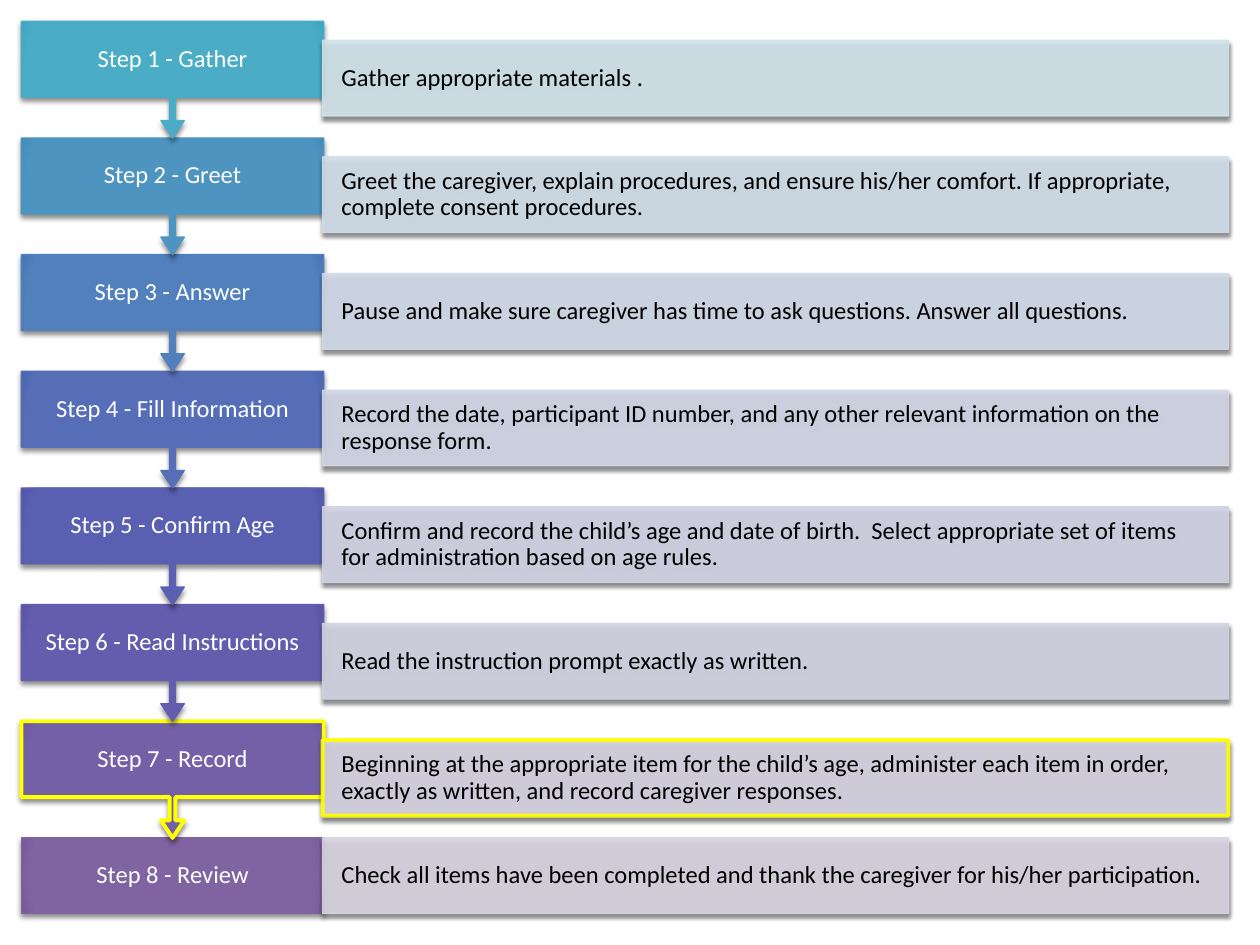
from dataclasses import dataclass

from pptx import Presentation
from pptx.dml.color import RGBColor
from pptx.enum.shapes import MSO_SHAPE
from pptx.enum.text import MSO_ANCHOR, PP_ALIGN
from pptx.oxml import parse_xml
from pptx.oxml.ns import nsdecls, qn
from pptx.util import Inches, Pt


@dataclass(frozen=True)
class Theme:
    """Colours, font and sizes shared by the whole slide."""
    font: str = "Calibri"
    text_size: float = 14
    step_text: str = "FFFFFF"
    detail_text: str = "000000"
    shadow: str = "000000"
    highlight: str = "FFFF00"
    highlight_width: float = 2.25
    line_width: float = 0.79
    detail_opacity: int = 90


@dataclass(frozen=True)
class Step:
    """One step of the procedure with its pair of colours."""
    name: str
    detail: str
    color: str
    pale: str
    highlighted: bool = False


THEME = Theme()

STEPS = [
    Step("Gather", "Gather appropriate materials .", "4BACC6", "D0E3EA"),
    Step("Greet", "Greet the caregiver, explain procedures, and ensure his/her comfort. "
         "If appropriate, complete consent procedures.", "4E94C1", "D0DEE9"),
    Step("Answer", "Pause and make sure caregiver has time to ask questions. "
         "Answer all questions.", "5280BC", "D0DAE8"),
    Step("Fill Information", "Record the date, participant ID number, and any other relevant "
         "information on the response form.", "556EB7", "D1D6E6"),
    Step("Confirm Age", "Confirm and record the child’s age and date of birth.  Select "
         "appropriate set of items for administration based on age rules.", "5960B2", "D1D3E5"),
    Step("Read Instructions", "Read the instruction prompt exactly as written.",
         "645DAD", "D3D2E3"),
    Step("Record", "Beginning at the appropriate item for the child’s age, administer each item "
         "in order, exactly as written, and record caregiver responses.",
         "7460A7", "D6D2E1", highlighted=True),
    Step("Review", "Check all items have been completed and thank the caregiver for "
         "his/her participation.", "8064A2", "D8D3E0"),
]

LEFT, TOP, LAST_TOP = 0.17, 0.17, 6.65
STEP_WIDTH, BOX_HEIGHT = 2.4, 0.6
DETAIL_LEFT, DETAIL_WIDTH, DETAIL_DROP = 2.56, 7.19, 0.15
PITCH = (LAST_TOP - TOP) / (len(STEPS) - 1)
CALLOUT_ADJUSTMENTS = (0.05, 0.1, 0.15, 0.65)


def write_text(shape, text, *, color, alignment, side_inset, end_inset):
    """Fill the shape with one formatted paragraph."""
    frame = shape.text_frame
    frame.word_wrap = True
    frame.vertical_anchor = MSO_ANCHOR.MIDDLE
    frame.margin_left = frame.margin_right = Inches(side_inset)
    frame.margin_top = frame.margin_bottom = Inches(end_inset)
    paragraph = frame.paragraphs[0]
    paragraph.alignment = alignment
    paragraph.line_spacing = 0.9
    run = paragraph.add_run()
    run.text = text
    run.font.name = THEME.font
    run.font.size = Pt(THEME.text_size)
    run.font.color.rgb = RGBColor.from_string(color)


def set_shadow(shape, *, opacity, blur, distance):
    """Give the shape a soft shadow straight below it."""
    shape.shadow.inherit = False
    effects = shape._element.spPr.find(qn("a:effectLst"))
    effects.append(parse_xml(
        f'<a:outerShdw {nsdecls("a")} blurRad="{Pt(blur)}" dist="{Pt(distance)}" '
        f'dir="5400000" rotWithShape="0"><a:srgbClr val="{THEME.shadow}">'
        f'<a:alpha val="{opacity * 1000}"/></a:srgbClr></a:outerShdw>'))


def set_edge_gradient(shape, color):
    """Fill the shape with a colour that darkens slightly at its edge."""
    shape.fill.gradient()
    properties = shape._element.spPr
    properties.replace(properties.find(qn("a:gradFill")), parse_xml(
        f'<a:gradFill {nsdecls("a")} rotWithShape="1"><a:gsLst>'
        f'<a:gs pos="0"><a:srgbClr val="{color}"/></a:gs>'
        f'<a:gs pos="90000"><a:srgbClr val="{color}"/></a:gs>'
        f'<a:gs pos="100000"><a:srgbClr val="{color}"><a:lumMod val="93000"/></a:srgbClr></a:gs>'
        '</a:gsLst><a:path path="circle"><a:fillToRect l="100000" t="100000" '
        'r="100000" b="100000"/></a:path></a:gradFill>'))


def set_outline(shape, step, color):
    """Draw a thin outline, or the strong one of a highlighted step."""
    chosen = THEME.highlight if step.highlighted else color
    width = THEME.highlight_width if step.highlighted else THEME.line_width
    shape.line.color.rgb = RGBColor.from_string(chosen)
    shape.line.width = Pt(width)


def set_opacity(shape, percent):
    """Make the solid fill and outline partly transparent."""
    for color in shape._element.spPr.iter(qn("a:srgbClr")):
        color.append(parse_xml(f'<a:alpha {nsdecls("a")} val="{percent * 1000}"/>'))


def add_step_box(slide, step, number, left, top, width, height, has_arrow):
    """Place the coloured step name, with an arrow to the next step if any."""
    kind = MSO_SHAPE.DOWN_ARROW_CALLOUT if has_arrow else MSO_SHAPE.RECTANGLE
    shape = slide.shapes.add_shape(kind, Inches(left), Inches(top), Inches(width), Inches(height))
    if has_arrow:
        for index, value in enumerate(CALLOUT_ADJUSTMENTS):
            shape.adjustments[index] = value
    set_edge_gradient(shape, step.color)
    set_outline(shape, step, step.color)
    set_shadow(shape, opacity=45, blur=3, distance=2)
    write_text(shape, f"Step {number} - {step.name}", color=THEME.step_text,
               alignment=PP_ALIGN.CENTER, side_inset=0.17, end_inset=0.11)


def add_detail_box(slide, step, left, top, width, height):
    """Place the pale box that explains the step."""
    shape = slide.shapes.add_shape(
        MSO_SHAPE.RECTANGLE, Inches(left), Inches(top), Inches(width), Inches(height))
    shape.fill.solid()
    shape.fill.fore_color.rgb = RGBColor.from_string(step.pale)
    set_outline(shape, step, step.pale)
    set_opacity(shape, THEME.detail_opacity)
    set_shadow(shape, opacity=50, blur=2.5, distance=2)
    write_text(shape, step.detail, color=THEME.detail_text,
               alignment=PP_ALIGN.LEFT, side_inset=0.15, end_inset=0.05)


def add_procedure(slide):
    """Stack the steps from last to first so that each arrow lies on top."""
    for index, step in reversed(list(enumerate(STEPS))):
        top = TOP + index * PITCH
        has_arrow = index < len(STEPS) - 1
        add_step_box(slide, step, index + 1, LEFT, top, STEP_WIDTH,
                     PITCH if has_arrow else BOX_HEIGHT, has_arrow)
        add_detail_box(slide, step, DETAIL_LEFT, top + (DETAIL_DROP if has_arrow else 0),
                       DETAIL_WIDTH, BOX_HEIGHT)


def main():
    """Build and save the presentation."""
    presentation = Presentation()
    presentation.slide_width = Inches(10)
    presentation.slide_height = Inches(7.5)
    slide = presentation.slides.add_slide(presentation.slide_layouts[6])
    add_procedure(slide)
    presentation.save("out.pptx")


if __name__ == "__main__":
    main()
